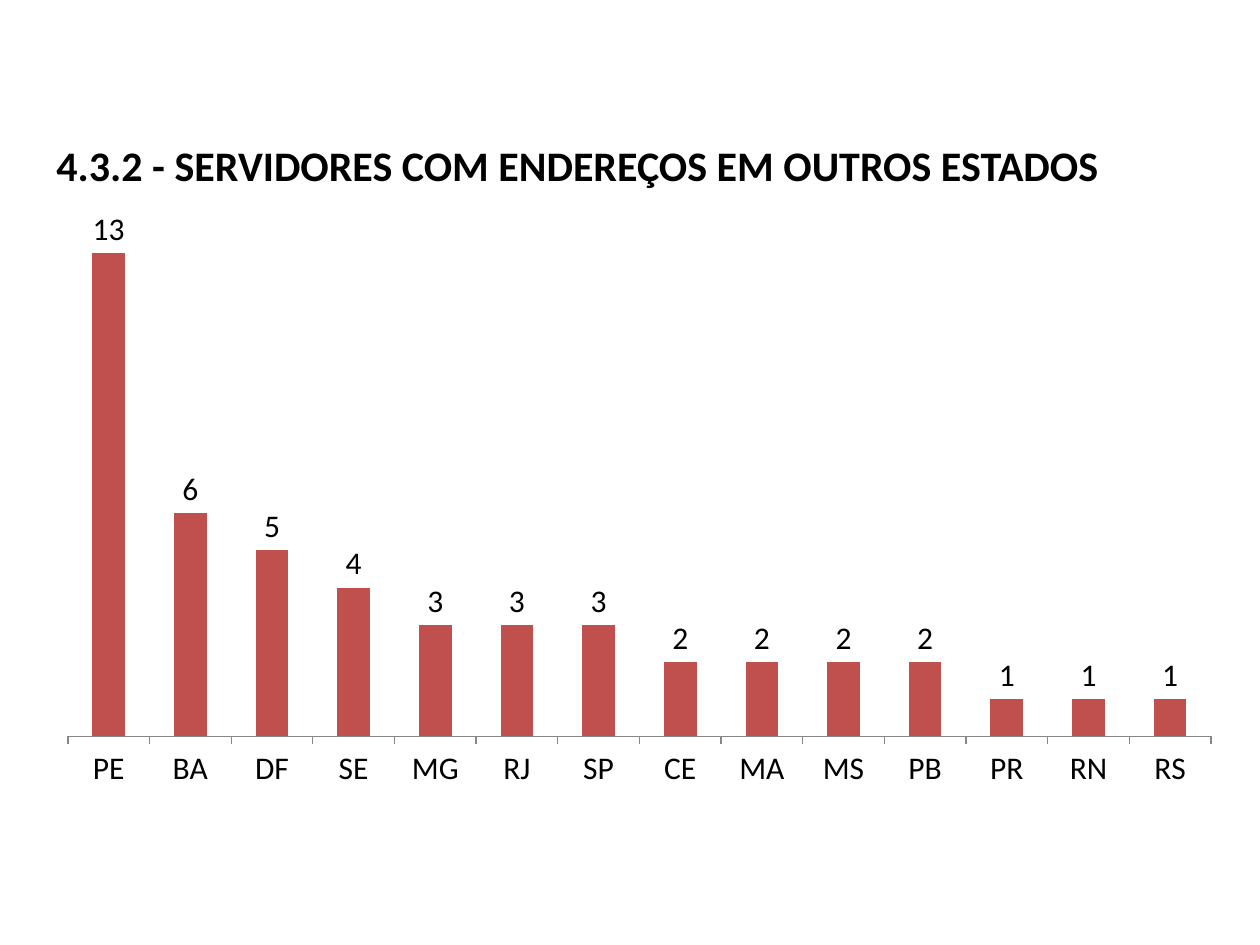
from pptx import Presentation
from pptx.chart.data import CategoryChartData
from pptx.dml.color import RGBColor
from pptx.enum.chart import XL_CHART_TYPE as ChartType
from pptx.enum.chart import XL_LABEL_POSITION as LabelPosition
from pptx.enum.chart import XL_TICK_MARK as TickMark
from pptx.enum.text import MSO_ANCHOR as Anchor
from pptx.util import Inches, Pt

COLUMNS, ROWS = 200, 150
SERVERS_BY_STATE = {
    "PE": 13, "BA": 6, "DF": 5, "SE": 4, "MG": 3, "RJ": 3, "SP": 3,
    "CE": 2, "MA": 2, "MS": 2, "PB": 2, "PR": 1, "RN": 1, "RS": 1,
}


def color(hex_text):
    return RGBColor.from_string(hex_text)


def apply(target, values):
    for name, value in values.items():
        setattr(target, name, value)


class SlideBuilder:
    """Holds the style and the current slide; places are in grid columns and rows."""

    FONT = "Calibri"
    TEXT, BAR, AXIS = "000000", "C0504D", "878787"

    def __init__(self, deck):
        self.cell_width = deck.slide_width / COLUMNS
        self.cell_height = deck.slide_height / ROWS
        self.slide = deck.slides.add_slide(deck.slide_layouts[6])

    def place(self, column, row, width, height):
        return (round(column * self.cell_width), round(row * self.cell_height),
                round(width * self.cell_width), round(height * self.cell_height))

    def style_font(self, font, size, bold=False):
        apply(font, {"name": self.FONT, "size": Pt(size), "bold": bold})
        font.color.rgb = color(self.TEXT)

    def title(self, text, *area):
        frame = self.slide.shapes.add_textbox(*self.place(*area)).text_frame
        apply(frame, {"word_wrap": True, "vertical_anchor": Anchor.MIDDLE})
        heading = frame.paragraphs[0].add_run()
        heading.text = text
        self.style_font(heading.font, 24, bold=True)

    def column_chart(self, name, counts, top, *area):
        data = CategoryChartData()
        data.categories = list(counts)
        data.add_series(name, list(counts.values()))
        chart = self.slide.shapes.add_chart(
            ChartType.COLUMN_CLUSTERED, *self.place(*area), data).chart
        apply(chart, {"has_legend": False, "has_title": False})
        self.style_font(chart.font, 18)

        apply(chart.value_axis, {
            "visible": False, "has_major_gridlines": False,
            "minimum_scale": 0, "maximum_scale": top,
        })
        states = chart.category_axis
        apply(states, {"major_tick_mark": TickMark.OUTSIDE,
                       "minor_tick_mark": TickMark.NONE,
                       "has_major_gridlines": False})
        states.format.line.width = Pt(0.75)
        states.format.line.color.rgb = color(self.AXIS)

        plot = chart.plots[0]
        apply(plot, {"gap_width": 150, "vary_by_categories": False,
                     "has_data_labels": True})
        apply(plot.data_labels, {"show_value": True,
                                 "position": LabelPosition.OUTSIDE_END})
        bars = plot.series[0]
        bars.invert_if_negative = False
        bars.format.fill.solid()
        bars.format.fill.fore_color.rgb = color(self.BAR)


def main():
    deck = Presentation()
    apply(deck, {"slide_width": Inches(10), "slide_height": Inches(7.5)})
    builder = SlideBuilder(deck)
    builder.title("4.3.2 - SERVIDORES COM ENDEREÇOS EM OUTROS ESTADOS",
                  7, 21.4, 170, 9.4)
    builder.column_chart("Series 1", SERVERS_BY_STATE, 14, 7, 32.4, 189, 94.4)
    deck.save("out.pptx")


if __name__ == "__main__":
    main()
